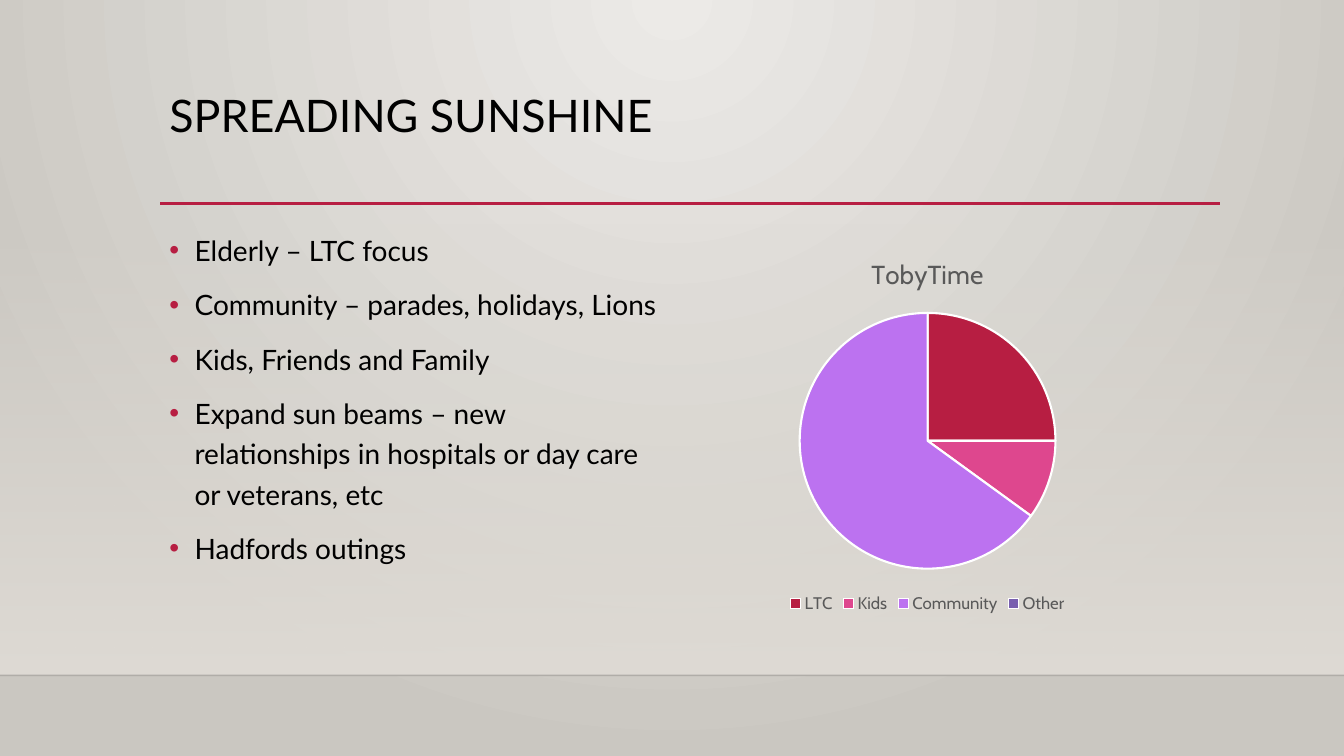
from lxml.etree import SubElement
from pptx import Presentation
from pptx.chart.data import CategoryChartData
from pptx.dml.color import RGBColor
from pptx.enum.chart import XL_CHART_TYPE, XL_LEGEND_POSITION
from pptx.enum.shapes import MSO_CONNECTOR, MSO_SHAPE
from pptx.enum.text import MSO_ANCHOR, MSO_AUTO_SIZE, PP_ALIGN
from pptx.oxml.ns import qn
from pptx.util import Inches, Pt

BLACK = RGBColor(0x00, 0x00, 0x00)
WHITE = RGBColor(0xFF, 0xFF, 0xFF)
GREY = RGBColor(0x59, 0x59, 0x59)
CRIMSON = RGBColor(0xB7, 0x1E, 0x42)
PINK = RGBColor(0xDE, 0x47, 0x8E)
LILAC = RGBColor(0xBC, 0x72, 0xF0)
VIOLET = RGBColor(0x79, 0x5F, 0xAF)
GLOW = RGBColor(0xEC, 0xEA, 0xE7)
STONE = RGBColor(0xCA, 0xC7, 0xC1)
SAND = RGBColor(0xDF, 0xDB, 0xD5)

FOCUS_POINTS = [
    "Elderly – LTC focus",
    "Community – parades, holidays, Lions",
    "Kids, Friends and Family",
    "Expand sun beams – new relationships in hospitals or day care or veterans, etc",
    "Hadfords outings",
]
TIME_SHARES = {
    "LTC": (25, CRIMSON),
    "Kids": (10, PINK),
    "Community": (65, LILAC),
    "Other": (None, VIOLET),
}


def format_font(font, size, color, name):
    font.size = Pt(size)
    font.color.rgb = color
    font.name = name
    font.bold = False


def write_text(para, text, size, color=BLACK, font="Lato", line_spacing=None, space_before=0):
    span = para.add_run()
    span.text = text
    format_font(span.font, size, color, font)
    para.alignment = PP_ALIGN.LEFT
    para.space_before = Pt(space_before)
    if line_spacing:
        para.line_spacing = line_spacing


def add_bullet(para, color, indent):
    properties = para._p.get_or_add_pPr()
    properties.set("marL", str(indent))
    properties.set("indent", str(-indent))
    bullet_color = SubElement(properties, qn("a:buClr"))
    SubElement(bullet_color, qn("a:srgbClr"), val=str(color))
    SubElement(properties, qn("a:buFont"), typeface="Arial")
    SubElement(properties, qn("a:buChar"), char="•")


def set_alpha(color_parent, percent):
    for color in color_parent.iter(qn("a:srgbClr")):
        SubElement(color, qn("a:alpha"), val=str(percent * 1000))


def color_stops(fill, *colors):
    fill.gradient()
    for stop, color in zip(fill.gradient_stops, colors):
        stop.color.rgb = color


class SlideBuilder:
    text_font = "Lato"
    chart_font = "Cabin"

    def __init__(self, deck):
        self.slide = deck.slides.add_slide(deck.slide_layouts[1])
        self.shapes = self.slide.shapes

    def radial_background(self, inner, outer):
        """Spread a circular gradient from the top middle of the slide."""
        color_stops(self.slide.background.fill, inner, outer)
        gradient = next(self.slide._element.iter(qn("a:gradFill")))
        gradient.remove(gradient.find(qn("a:lin")))
        path = SubElement(gradient, qn("a:path"))
        path.set("path", "circle")
        SubElement(path, qn("a:fillToRect"), l="43000", t="0", r="43000", b="100000")

    def fading_panel(self, left, top, width, height, color):
        """Place a panel behind everything, clear at its top and solid at its foot."""
        panel = self.shapes.add_shape(
            MSO_SHAPE.RECTANGLE, Inches(left), Inches(top), Inches(width), Inches(height))
        panel.shadow.inherit = False
        panel.line.fill.background()
        color_stops(panel.fill, color, color)
        panel.fill.gradient_angle = 270
        set_alpha(next(panel._element.iter(qn("a:gs"))), 0)
        self.shapes._spTree.insert(2, panel._element)

    def rule(self, left, right, y, color, weight, alpha=None):
        line = self.shapes.add_connector(
            MSO_CONNECTOR.STRAIGHT, Inches(left), Inches(y), Inches(right), Inches(y))
        line.line.color.rgb = color
        line.line.width = Pt(weight)
        SubElement(line._element.spPr, qn("a:effectLst"))
        if alpha is not None:
            set_alpha(line._element.spPr, alpha)

    def place(self, box, left, top, width, height):
        box.left, box.top = Inches(left), Inches(top)
        box.width, box.height = Inches(width), Inches(height)
        frame = box.text_frame
        frame.word_wrap = True
        frame.auto_size = MSO_AUTO_SIZE.NONE
        frame.vertical_anchor = MSO_ANCHOR.TOP
        return frame

    def title(self, text, *area):
        frame = self.place(self.shapes.title, *area)
        write_text(frame.paragraphs[0], text, 32, font=self.text_font, line_spacing=0.9)

    def bullet_list(self, items, *area):
        frame = self.place(self.slide.placeholders[1], *area)
        for number, item in enumerate(items):
            para = frame.add_paragraph() if number else frame.paragraphs[0]
            add_bullet(para, CRIMSON, Inches(0.25))
            write_text(para, item, 20, font=self.text_font, line_spacing=1.2,
                       space_before=10 if number else 0)

    def pie(self, name, shares, left, top, width, height):
        data = CategoryChartData()
        data.categories = list(shares)
        data.add_series(name, [value for value, _ in shares.values()])
        chart = self.shapes.add_chart(
            XL_CHART_TYPE.PIE, Inches(left), Inches(top), Inches(width), Inches(height), data).chart
        format_font(chart.font, 10, BLACK, self.chart_font)

        chart.has_title = True
        heading = chart.chart_title
        heading.include_in_layout = False
        write_text(heading.text_frame.paragraphs[0], name, 18.6, GREY, self.chart_font)

        chart.has_legend = True
        chart.legend.position = XL_LEGEND_POSITION.BOTTOM
        chart.legend.include_in_layout = False
        format_font(chart.legend.font, 12, GREY, self.chart_font)

        plot = chart.plots[0]
        plot.vary_by_categories = True
        for number, (_, color) in enumerate(shares.values()):
            slice_format = plot.series[0].points[number].format
            slice_format.fill.solid()
            slice_format.fill.fore_color.rgb = color
            slice_format.line.color.rgb = WHITE
            slice_format.line.width = Pt(1.5)


def main():
    deck = Presentation()
    deck.slide_width, deck.slide_height = Inches(13.33), Inches(7.5)
    page = SlideBuilder(deck)
    page.radial_background(GLOW, STONE)
    page.fading_panel(0, 2.21, 13.33, 4.49, SAND)
    page.rule(0, 13.33, 6.7, BLACK, 1, alpha=20)
    page.rule(1.59, 12.1, 2.02, CRIMSON, 2.5)
    page.title("SPREADING SUNSHINE", 1.58, 0.88, 10.5, 1.16)
    page.bullet_list(FOCUS_POINTS, 1.58, 2.2, 5.08, 3.77)
    page.pie("TobyTime", TIME_SHARES, 6.66, 2.37, 5.08, 3.76)
    deck.save("out.pptx")


if __name__ == "__main__":
    main()
